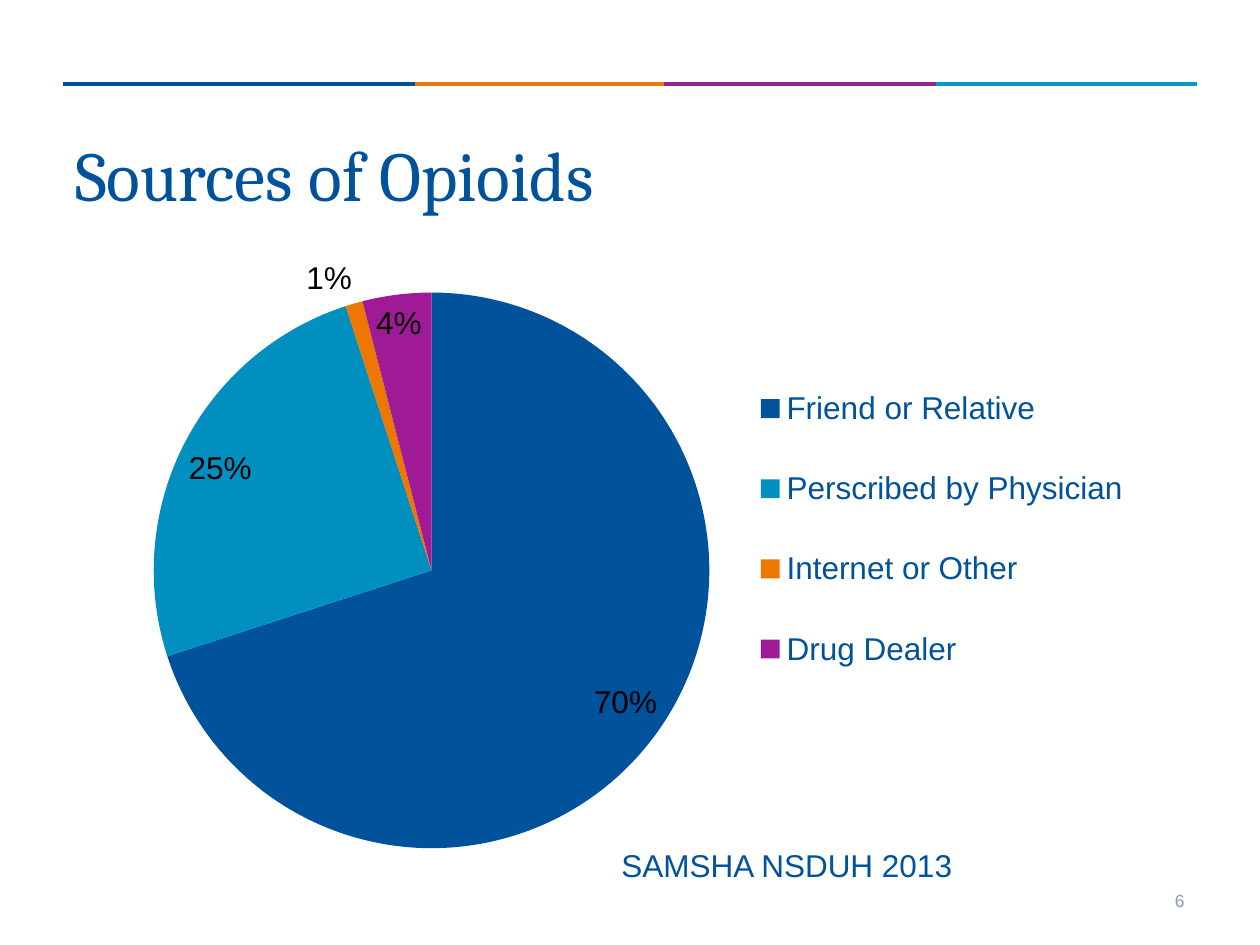
from dataclasses import dataclass
from itertools import pairwise

from lxml.etree import SubElement
from pptx import Presentation
from pptx.chart.data import CategoryChartData
from pptx.dml.color import RGBColor
from pptx.enum.chart import XL_CHART_TYPE, XL_LABEL_POSITION, XL_LEGEND_POSITION
from pptx.enum.shapes import MSO_CONNECTOR
from pptx.enum.text import MSO_ANCHOR, PP_ALIGN
from pptx.oxml import parse_xml
from pptx.oxml.ns import nsdecls, qn
from pptx.util import Pt


@dataclass(frozen=True)
class Theme:
    """Colours, fonts and type sizes of the slide."""
    blue: str = "00529B"
    rule_colors: tuple = ("00529B", "EC7A08", "922784", "009AC7")
    slice_colors: tuple = ("00529B", "008FBE", "ED7700", "9E1A96")
    label: str = "000000"
    muted: str = "8C98BB"
    heading_font: str = "Cambria"
    body_font: str = "Arial"
    title_size: int = 40
    body_size: int = 18
    number_size: int = 10


THEME = Theme()


def style_font(font, size, color, name=THEME.body_font):
    """Set the size, colour and typeface of a font."""
    font.size = Pt(size)
    font.name = name
    font.color.rgb = RGBColor.from_string(color)


def add_text(slide, box, text, size, color, name=THEME.body_font,
             anchor=MSO_ANCHOR.TOP, align=PP_ALIGN.LEFT):
    """Add one line of text in a box of left, top, width and height."""
    frame = slide.shapes.add_textbox(*map(Pt, box)).text_frame
    frame.word_wrap = True
    frame.vertical_anchor = anchor
    frame.text = text
    paragraph = frame.paragraphs[0]
    paragraph.alignment = align
    style_font(paragraph.runs[0].font, size, color, name)


def add_color_rule(slide, box):
    """Draw the four-colour rule across the width of the box."""
    left, top, width, _ = box
    stops = [left + width * share for share in (0, 0.31, 0.53, 0.77, 1)]
    for (start, end), color in zip(pairwise(stops), THEME.rule_colors):
        line = slide.shapes.add_connector(
            MSO_CONNECTOR.STRAIGHT, Pt(start), Pt(top), Pt(end), Pt(top))
        line.line.color.rgb = RGBColor.from_string(color)
        line.line.width = Pt(2.25)
        SubElement(line._element.spPr, qn("a:effectLst"))


def set_layout(element, index, x, y, w, h, inner=False):
    """Place a chart part at fractions of the chart area."""
    for layout in element.findall(qn("c:layout")):
        element.remove(layout)
    target = '<c:layoutTarget val="inner"/>' if inner else ""
    element.insert(index, parse_xml(
        f'<c:layout {nsdecls("c")}><c:manualLayout>{target}'
        '<c:xMode val="edge"/><c:yMode val="edge"/>'
        f'<c:x val="{x}"/><c:y val="{y}"/><c:w val="{w}"/><c:h val="{h}"/>'
        '</c:manualLayout></c:layout>'))


def add_slice_labels(plot):
    """Show the percentage of each slice where it fits best."""
    plot.has_data_labels = True
    labels = plot.data_labels
    labels.show_percentage = True
    labels.show_value = False
    labels.number_format = "0%"
    labels.number_format_is_linked = False
    labels.position = XL_LABEL_POSITION.BEST_FIT
    style_font(labels.font, THEME.body_size, THEME.label)


def add_source_pie(slide, box):
    """Add the pie chart of opioid sources with its legend."""
    data = CategoryChartData()
    data.categories = ["Friend or Relative", "Perscribed by Physician",
                       "Internet or Other", "Drug Dealer"]
    data.add_series("Series 1", (70, 25, 1, 4))
    chart = slide.shapes.add_chart(XL_CHART_TYPE.PIE, *map(Pt, box), data).chart
    chart.has_title = False
    style_font(chart.font, THEME.body_size, THEME.blue)

    plot = chart.plots[0]
    plot.vary_by_categories = True
    for index, color in enumerate(THEME.slice_colors):
        fill = plot.series[0].points[index].format.fill
        fill.solid()
        fill.fore_color.rgb = RGBColor.from_string(color)
    add_slice_labels(plot)

    chart.has_legend = True
    chart.legend.position = XL_LEGEND_POSITION.RIGHT
    chart.legend.include_in_layout = False
    style_font(chart.legend.font, THEME.body_size, THEME.blue)
    set_layout(plot._element.getparent(), 0, 0.08, 0.09, 0.49, 0.88, inner=True)
    set_layout(chart.legend._element, 1, 0.6, 0.18, 0.35, 0.57)


def build_slide(presentation):
    """Add the slide on sources of opioids."""
    slide = presentation.slides.add_slide(presentation.slide_layouts[6])
    add_color_rule(slide, (36, 48, 648, 0))
    add_text(slide, (36, 54, 648, 90), "Sources of Opioids", THEME.title_size,
             THEME.blue, THEME.heading_font, MSO_ANCHOR.MIDDLE)
    add_source_pie(slide, (36, 132, 648, 366))
    add_text(slide, (612, 500, 72, 29), "6", THEME.number_size, THEME.muted,
             anchor=MSO_ANCHOR.MIDDLE, align=PP_ALIGN.RIGHT)
    add_text(slide, (348, 480, 222, 51), "SAMSHA NSDUH 2013",
             THEME.body_size, THEME.blue)


def main():
    """Build and save the presentation."""
    presentation = Presentation()
    presentation.slide_width = Pt(720)
    presentation.slide_height = Pt(540)
    build_slide(presentation)
    presentation.save("out.pptx")


if __name__ == "__main__":
    main()
